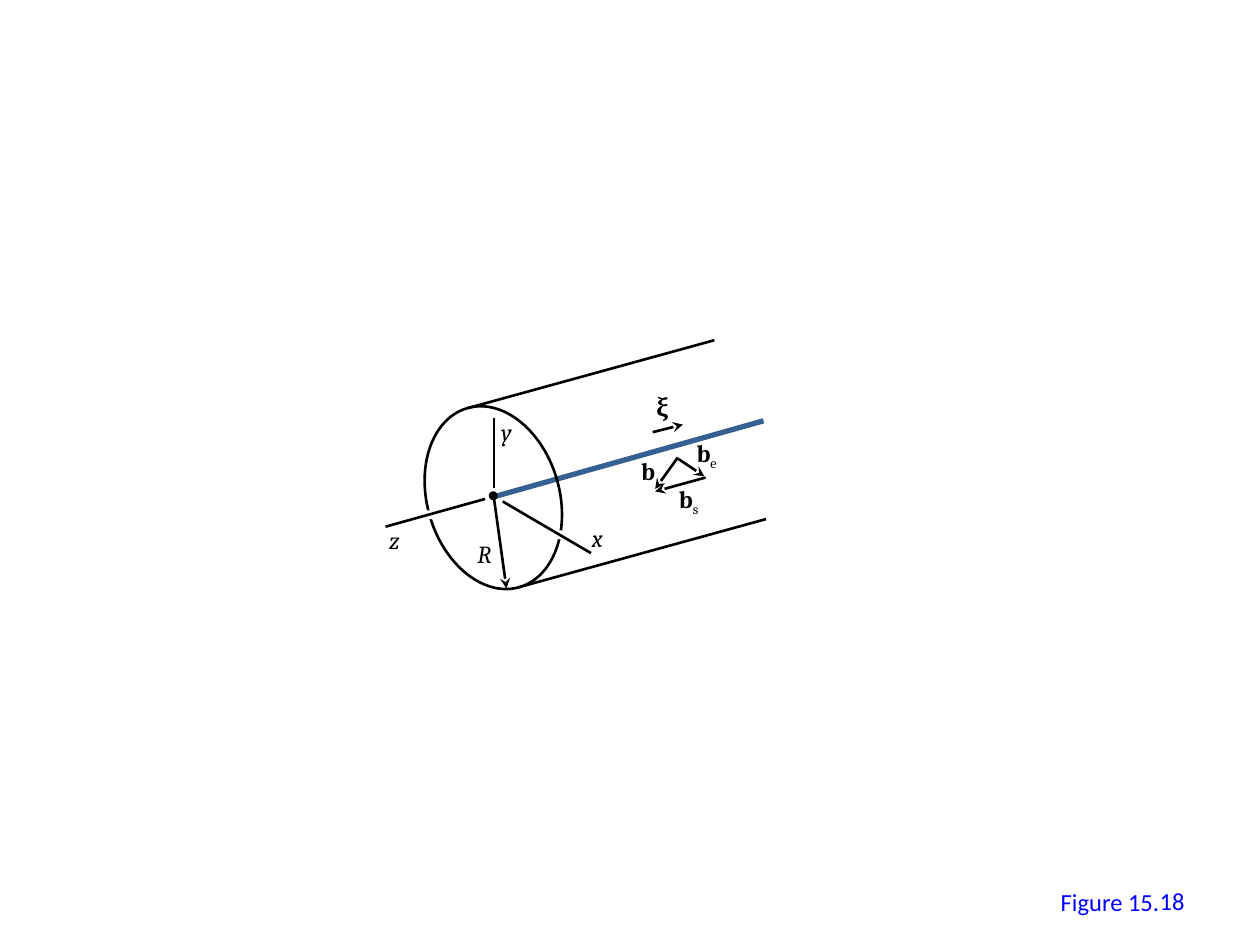
from lxml import etree
from pptx import Presentation
from pptx.dml.color import RGBColor
from pptx.enum.shapes import MSO_CONNECTOR, MSO_SHAPE
from pptx.enum.text import MSO_ANCHOR, MSO_AUTO_SIZE, PP_ALIGN
from pptx.oxml.ns import qn
from pptx.util import Pt

STRAIGHT = MSO_CONNECTOR.STRAIGHT
OVAL, RECTANGLE = MSO_SHAPE.OVAL, MSO_SHAPE.RECTANGLE
TOP, MIDDLE = MSO_ANCHOR.TOP, MSO_ANCHOR.MIDDLE
LEFT, RIGHT = PP_ALIGN.LEFT, PP_ALIGN.RIGHT
FIT_SHAPE, NO_FIT = MSO_AUTO_SIZE.SHAPE_TO_FIT_TEXT, MSO_AUTO_SIZE.NONE
BLACK = RGBColor(0, 0, 0)
WHITE = RGBColor(255, 255, 255)
BLUE = RGBColor(0, 0, 255)
STEEL = RGBColor(0x37, 0x60, 0x92)
PX = 9144

presentation = Presentation()
presentation.slide_width = 1000 * PX
presentation.slide_height = 750 * PX
slide = presentation.slides.add_slide(presentation.slide_layouts[6])


def add_text(text, box, subscript="", font="Cambria", color=BLACK, bold=False,
             italic=False, align=LEFT, anchor=TOP, wrap=False):
    shape = slide.shapes.add_textbox(*[value * PX for value in box])
    frame = shape.text_frame
    frame.word_wrap = wrap
    frame.auto_size = NO_FIT if wrap else FIT_SHAPE
    frame.vertical_anchor = anchor
    paragraph = frame.paragraphs[0]
    paragraph.alignment = align
    for content, lowered in ((text, False), (subscript, True)):
        if content:
            run = paragraph.add_run()
            run.text = content
            run.font.name = font
            run.font.size = Pt(14)
            run.font.color.rgb = color
            run.font.bold = bold and not lowered
            run.font.italic = italic
            if lowered:
                run._r.get_or_add_rPr().set("baseline", "-25000")


def add_line(start, end, color=BLACK, width=1.5, arrow=False):
    points = [value * PX for value in (*start, *end)]
    connector = slide.shapes.add_connector(STRAIGHT, *points)
    connector.line.color.rgb = color
    connector.line.width = Pt(width)
    properties = connector._element.spPr
    if arrow:
        outline = properties.find(qn("a:ln"))
        etree.SubElement(outline, qn("a:tailEnd"), type="stealth")
    etree.SubElement(properties, qn("a:effectLst"))


add_text("Figure 15.", (832, 699, 99, 34), font="Calibri", color=BLUE)
add_text("18", (717, 695, 233, 40), font="Calibri", color=BLUE,
         align=RIGHT, anchor=MIDDLE, wrap=True)

add_line((606, 334), (393, 394), color=STEEL, width=3)
add_line((392, 387), (392, 332))

center_dot = slide.shapes.add_shape(OVAL, 389 * PX, 391 * PX, 5 * PX, 5 * PX)
center_dot.shadow.inherit = False
center_dot.fill.solid()
center_dot.fill.fore_color.rgb = BLACK
center_dot.line.color.rgb = BLACK
center_dot.line.width = Pt(1.5)

for start, end in (
    ((392, 395), (402, 467)),
    ((518, 343), (542, 337)),
    ((560, 379), (520, 390)),
    ((538, 364), (559, 378)),
    ((538, 363), (520, 388)),
):
    add_line(start, end, arrow=True)

for label, box in (
    ("x", (460, 410, 34, 34)),
    ("y", (388, 326, 34, 34)),
    ("z", (299, 412, 33, 34)),
    ("R", (369, 423, 37, 34)),
):
    add_text(label, box, italic=True)

for label, subscript, box in (
    ("ξ", "", (511, 306, 30, 34)),
    ("b", "e", (543, 343, 37, 34)),
    ("b", "", (499, 357, 31, 34)),
    ("b", "s", (529, 379, 36, 34)),
):
    add_text(label, box, subscript=subscript, bold=True)

cylinder_end = slide.shapes.add_shape(OVAL, 339 * PX, 321 * PX, 105 * PX, 148 * PX)
cylinder_end.shadow.inherit = False
cylinder_end.rotation = 343.7
cylinder_end.fill.background()
cylinder_end.line.color.rgb = BLACK
cylinder_end.line.width = Pt(1.5)
add_line((371, 324), (567, 270))
add_line((412, 466), (608, 412))

for gap_left, gap_top, axis_start, axis_end in (
    (337, 405, (385, 396), (306, 418)),
    (440, 421, (469, 439), (399, 398)),
):
    gap = slide.shapes.add_shape(RECTANGLE, gap_left * PX, gap_top * PX, 6 * PX, 7 * PX)
    gap.shadow.inherit = False
    gap.fill.solid()
    gap.fill.fore_color.rgb = WHITE
    gap.line.fill.background()
    add_line(axis_start, axis_end)

presentation.save("out.pptx")
